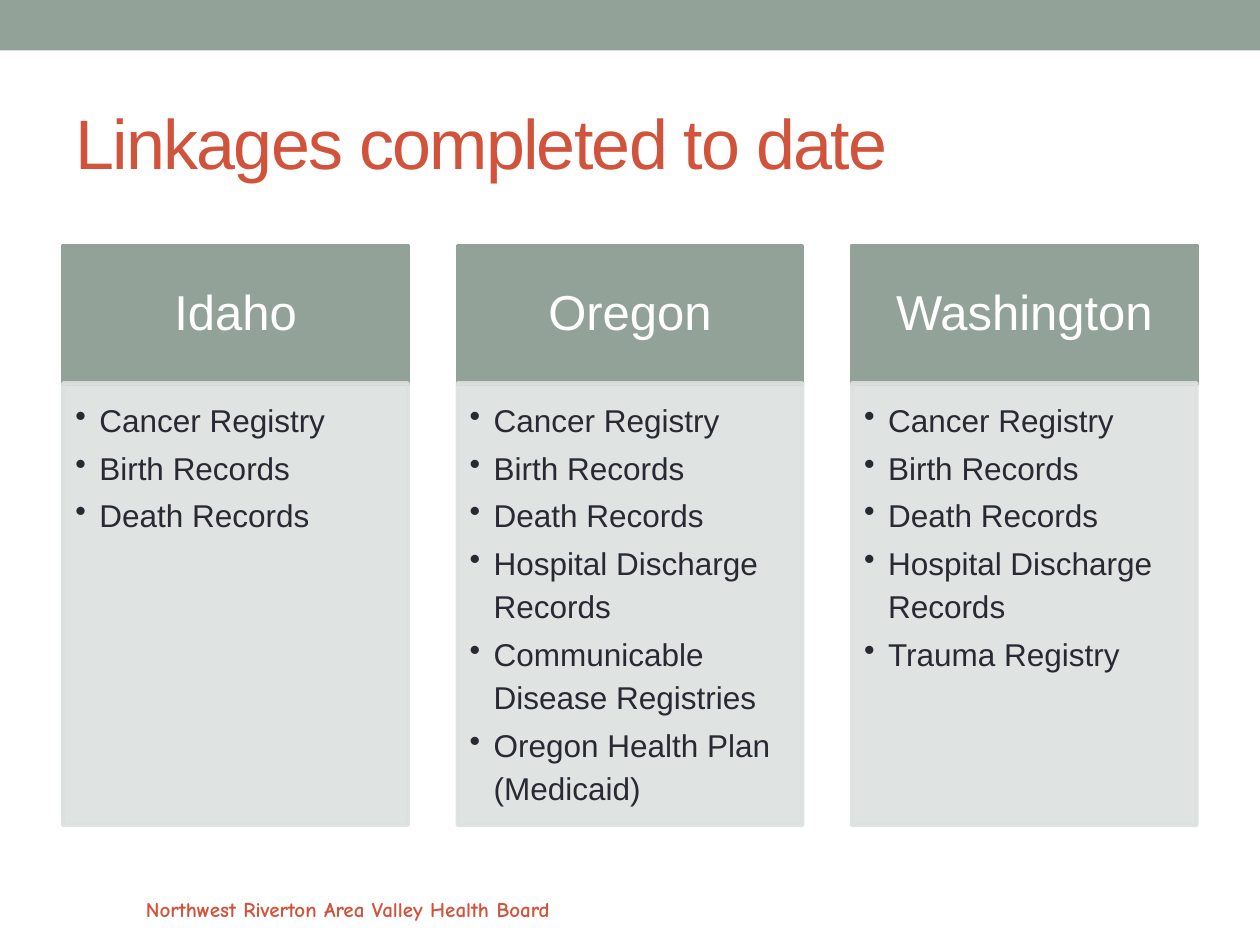
import pptx
import pptx.util
import pptx.dml.color
import pptx.enum.shapes
import pptx.enum.text
import pptx.oxml
import pptx.oxml.ns

Inches, Pt = pptx.util.Inches, pptx.util.Pt
RGBColor = pptx.dml.color.RGBColor
PP_ALIGN = pptx.enum.text.PP_ALIGN
MSO_ANCHOR = pptx.enum.text.MSO_ANCHOR

SAGE = RGBColor(0x93, 0xA2, 0x99)
PALE = RGBColor(0xDC, 0xE0, 0xDE)
RED = RGBColor(0xD2, 0x53, 0x3C)
INK = RGBColor(0x29, 0x29, 0x34)
WHITE = RGBColor(0xFF, 0xFF, 0xFF)

COMMON = ["Cancer Registry", "Birth Records", "Death Records"]
STATES = {
    "Idaho": COMMON,
    "Oregon": COMMON + ["Hospital Discharge Records",
                        "Communicable Disease Registries",
                        "Oregon Health Plan (Medicaid)"],
    "Washington": COMMON + ["Hospital Discharge Records", "Trauma Registry"],
}


def add_panel(s, x, y, w, h, color, line_width=0, alpha=None):
    """Add a filled rectangle, optionally outlined and translucent."""
    sp = s.shapes.add_shape(pptx.enum.shapes.MSO_SHAPE.RECTANGLE,
                            Inches(x), Inches(y), Inches(w), Inches(h))
    sp.shadow.inherit = False
    sp.fill.solid()
    sp.fill.fore_color.rgb = color
    if line_width:
        sp.line.color.rgb = color
        sp.line.width = Pt(line_width)
    else:
        sp.line.fill.background()
    if alpha:
        for clr in sp._element.spPr.iter(pptx.oxml.ns.qn("a:srgbClr")):
            clr.append(pptx.oxml.parse_xml(
                f'<a:alpha {pptx.oxml.ns.nsdecls("a")} val="{alpha * 1000}"/>'))
    return sp


def set_text(tf, lines, size, color, font="Arial", insets=(0.1, 0.05, 0.1, 0.05),
             anchor=MSO_ANCHOR.TOP, align=PP_ALIGN.LEFT):
    """Fill a text frame with paragraphs in one style."""
    tf.word_wrap = True
    tf.vertical_anchor = anchor
    tf.margin_left, tf.margin_top, tf.margin_right, tf.margin_bottom = map(Inches, insets)
    tf.text = "\n".join(lines)
    for p in tf.paragraphs:
        p.alignment = align
        for r in p.runs:
            r.font.name = font
            r.font.size = Pt(size)
            r.font.color.rgb = color


def add_bullets(tf):
    """Give every paragraph a hanging bullet and list spacing."""
    for p in tf.paragraphs:
        p.line_spacing = 1.14
        p.space_after = Pt(2.7)
        pPr = p._p.get_or_add_pPr()
        pPr.set("marL", str(Inches(0.19)))
        pPr.set("indent", str(-Inches(0.19)))
        pPr.append(pptx.oxml.parse_xml(
            f'<a:buChar {pptx.oxml.ns.nsdecls("a")} char="•"/>'))


def add_state(s, x, y, w, h, name, records):
    """Add a state column: a heading block above a list of records."""
    head_h = 1.1
    head = add_panel(s, x, y, w, head_h, SAGE, 2.08)
    set_text(head.text_frame, [name], 28, WHITE, insets=(0.22, 0.12, 0.22, 0.12),
             anchor=MSO_ANCHOR.MIDDLE, align=PP_ALIGN.CENTER)
    head.text_frame.paragraphs[0].line_spacing = 0.9
    body = add_panel(s, x, y + head_h - 0.01, w, h - head_h + 0.01, PALE, 2.08, 90)
    set_text(body.text_frame, records, 18, INK, insets=(0.1, 0.1, 0.14, 0.16))
    add_bullets(body.text_frame)


def add_states(s, x, y, w, h):
    """Spread the state columns evenly across the box."""
    col_w = 2.74
    step = (w - col_w) / (len(STATES) - 1)
    for i, (name, records) in enumerate(STATES.items()):
        add_state(s, x + i * step, y, col_w, h, name, records)


def add_title(s, x, y, w, h):
    """Add the slide title."""
    tf = s.shapes.add_textbox(Inches(x), Inches(y), Inches(w), Inches(h)).text_frame
    set_text(tf, ["Linkages completed to date"], 40, RED, anchor=MSO_ANCHOR.MIDDLE)
    tf.paragraphs[0].runs[0].font._element.set("spc", "-100")


def add_footer(s, x, y, w, h):
    """Add the organisation name at the foot."""
    tf = s.shapes.add_textbox(Inches(x), Inches(y), Inches(w), Inches(h)).text_frame
    set_text(tf, ["Northwest Riverton Area Valley Health Board"], 12, RED, "Comic Neue")
    tf.paragraphs[0].runs[0].font.bold = True


def main():
    """Build and save the slide."""
    prs = pptx.Presentation()
    prs.slide_width, prs.slide_height = Inches(10), Inches(7.5)
    s = prs.slides.add_slide(prs.slide_layouts[6])
    add_panel(s, 0, 0, 10, 0.4, SAGE)
    add_footer(s, 1.06, 7.07, 3.92, 0.3)
    add_title(s, 0.5, 0.58, 9, 1.08)
    add_states(s, 0.5, 1.95, 9, 4.6)
    prs.save("out.pptx")


if __name__ == "__main__":
    main()
